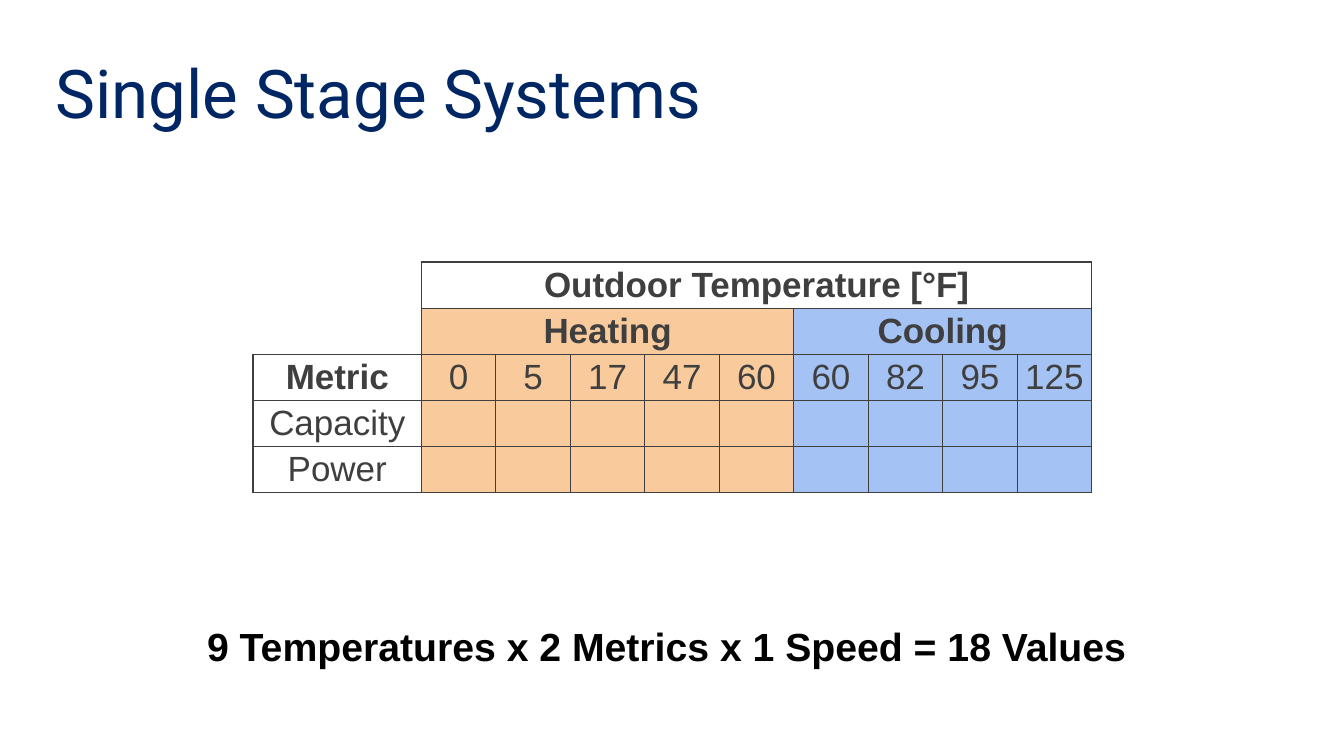
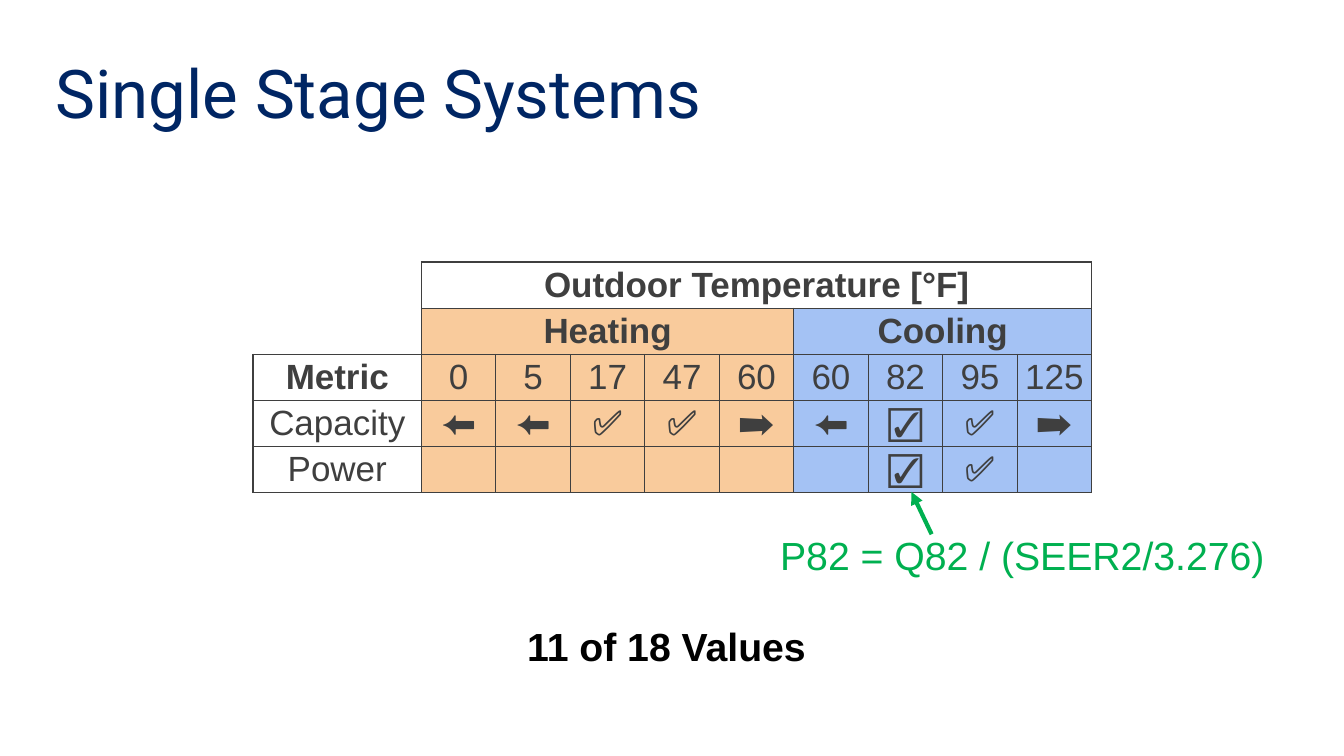
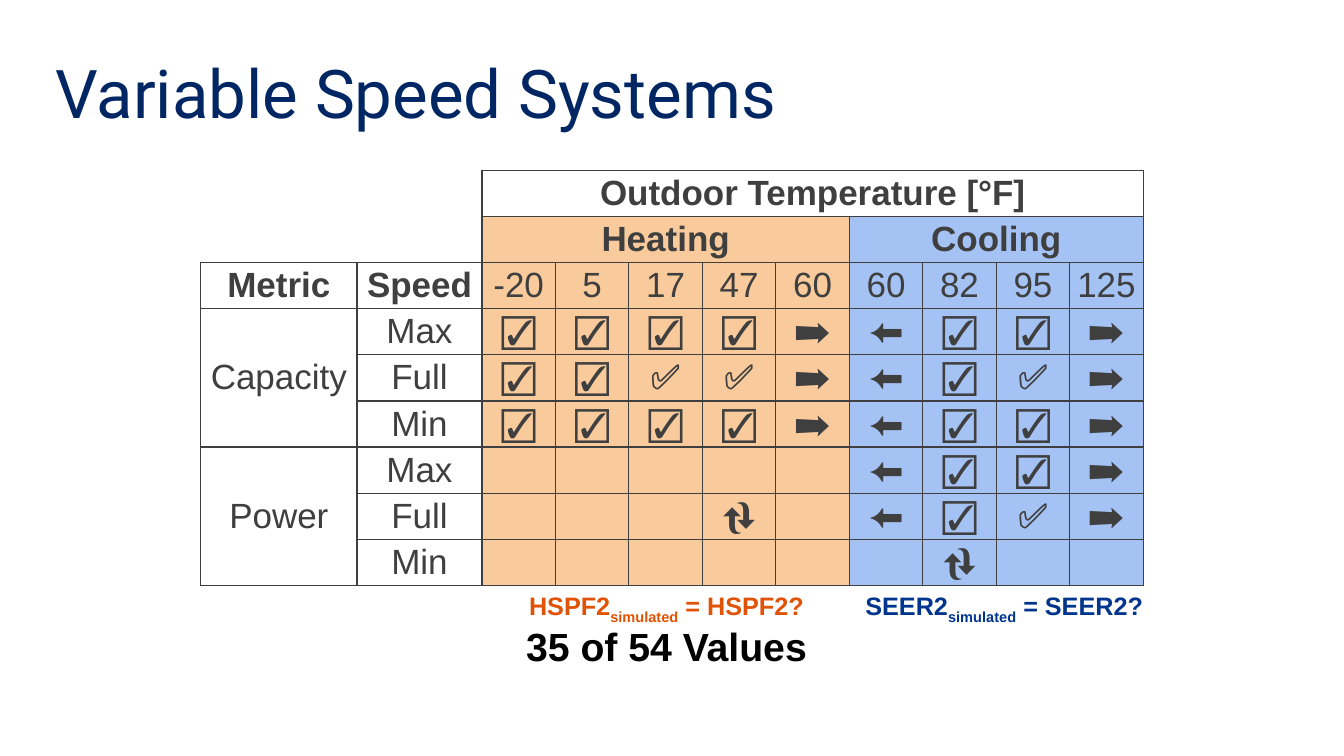
"""Build three slides of heat pump performance tables."""
import lxml.etree
import pptx
import pptx.dml.color
import pptx.enum.dml
import pptx.enum.shapes
import pptx.enum.text
import pptx.oxml.ns
import pptx.util

Inches = pptx.util.Inches
Pt = pptx.util.Pt
qn = pptx.oxml.ns.qn
CENTER = pptx.enum.text.PP_ALIGN.CENTER
MIDDLE = pptx.enum.text.MSO_ANCHOR.MIDDLE

NAVY = "002664"
GRAY = "3F3F3F"
GREEN = "00B050"
ORANGE = "F9CB9C"
BLUE = "A4C2F4"
NO_STYLE = "{2D5ABB26-0587-4C30-8999-92F81FD0307C}"
HEATING_COUNT = 5
TEMPERATURE_COUNT = 9
TOTAL_CENTER = 6.61


def color(value):
    return pptx.dml.color.RGBColor.from_string(value)


def add_text(slide, box, runs, size, text_color, bold=True, wrap=False):
    shape = slide.shapes.add_textbox(*[Inches(length) for length in box])
    shape.text_frame.word_wrap = wrap
    paragraph = shape.text_frame.paragraphs[0]
    paragraph.alignment = CENTER
    paragraph.font.name = "Arial"
    paragraph.font.size = Pt(size)
    paragraph.font.bold = bold
    paragraph.font.color.rgb = color(text_color)
    for text, baseline in runs:
        run = paragraph.add_run()
        run.text = text
        if baseline:
            run._r.get_or_add_rPr().set("baseline", str(baseline))


single_temperatures = "0 5 17 47 60 60 82 95 125"
variable_temperatures = "-20 5 17 47 60 60 82 95 125"
blank_row = "- - - - - - - - -"
tested_row = "☑️ ☑️ ☑️ ☑️ ➡️ ⬅️ ☑️ ☑️ ➡️"

pages = [
    {
        "title": "Single Stage Systems",
        "total": ("9 Temperatures x 2 Metrics x 1 Speed = 18 Values", 9.48),
        "box": (2.51, 2.6, 8.32, 2.29),
        "label_widths": [1.67],
        "rows": [
            (["Metric"], single_temperatures),
            (["Capacity"], blank_row),
            (["Power"], blank_row),
        ],
    },
    {
        "title": "Single Stage Systems",
        "total": ("11 of 18 Values", 3.04),
        "box": (2.51, 2.6, 8.32, 2.29),
        "label_widths": [1.67],
        "rows": [
            (["Metric"], single_temperatures),
            (["Capacity"], "⬅️ ⬅️ ✅ ✅ ➡️ ⬅️ ☑️ ✅ ➡️"),
            (["Power"], "- - - - - - ☑️ ✅ -"),
        ],
    },
    {
        "title": "Variable Speed Systems",
        "total": ("35 of 54 Values", 3.04),
        "box": (1.99, 1.69, 9.35, 4.12),
        "label_widths": [1.55, 1.24],
        "rows": [
            (["Metric", "Speed"], variable_temperatures),
            (["Capacity", "Max"], tested_row),
            (["", "Full"], "☑️ ☑️ ✅ ✅ ➡️ ⬅️ ☑️ ✅ ➡️"),
            (["", "Min"], tested_row),
            (["Power", "Max"], "- - - - - ⬅️ ☑️ ☑️ ➡️"),
            (["", "Full"], "- - - 🔃 - ⬅️ ☑️ ✅ ➡️"),
            (["", "Min"], "- - - - - - 🔃 - -"),
        ],
    },
]

presentation = pptx.Presentation()
presentation.slide_width = Inches(13.33)
presentation.slide_height = Inches(7.5)
slides = []

for page in pages:
    slide = presentation.slides.add_slide(presentation.slide_layouts[5])
    slides.append(slide)

    title = slide.shapes.title
    title.left, title.top = Inches(0.45), Inches(0.45)
    title.width, title.height = Inches(12.42), Inches(0.91)
    title.text_frame.text = page["title"]
    title.text_frame.auto_size = pptx.enum.text.MSO_AUTO_SIZE.NONE
    title.text_frame.vertical_anchor = MIDDLE
    paragraph = title.text_frame.paragraphs[0]
    paragraph.alignment = pptx.enum.text.PP_ALIGN.LEFT
    paragraph.font.name = "Roboto"
    paragraph.font.size = Pt(48)
    paragraph.font.color.rgb = color(NAVY)

    total, total_width = page["total"]
    total_box = (TOTAL_CENTER - total_width / 2, 6.12, total_width, 0.57)
    add_text(slide, total_box, [(total, 0)], 28, "000000")

    label_widths = page["label_widths"]
    label_count = len(label_widths)
    cooling_start = label_count + HEATING_COUNT
    blank_labels = [""] * label_count
    grid = [
        blank_labels + ["Outdoor Temperature [°F]"] + [""] * 8,
        blank_labels + ["Heating"] + [""] * 4 + ["Cooling"] + [""] * 3,
    ]
    for labels, marks in page["rows"]:
        grid.append(labels + ["" if mark == "-" else mark for mark in marks.split()])

    left, top, width, height = page["box"]
    frame = slide.shapes.add_table(
        len(grid), len(grid[0]), Inches(left), Inches(top), Inches(width), Inches(height)
    )
    table = frame.table
    table.first_row = False
    table.horz_banding = False
    table._tbl.tblPr.find(qn("a:tableStyleId")).text = NO_STYLE
    temperature_width = (width - sum(label_widths)) / TEMPERATURE_COUNT
    column_widths = label_widths + [temperature_width] * TEMPERATURE_COUNT
    for column, column_width in zip(table.columns, column_widths):
        column.width = Inches(column_width)

    last_column = len(column_widths) - 1
    table.cell(0, label_count).merge(table.cell(0, last_column))
    table.cell(1, label_count).merge(table.cell(1, cooling_start - 1))
    table.cell(1, cooling_start).merge(table.cell(1, last_column))
    if label_count == 2:
        for first_row in (3, 6):
            table.cell(first_row, 0).merge(table.cell(first_row + 2, 0))

    for row_index, texts in enumerate(grid):
        for column_index, text in enumerate(texts):
            cell = table.cell(row_index, column_index)
            cell.margin_left = cell.margin_right = Inches(0.03)
            cell.margin_top = cell.margin_bottom = Inches(0.02)
            cell.vertical_anchor = MIDDLE
            is_label = column_index < label_count
            paragraph = cell.text_frame.paragraphs[0]
            paragraph.text = text
            paragraph.alignment = CENTER
            paragraph.font.name = "Arial"
            paragraph.font.size = Pt(25)
            paragraph.font.bold = row_index < 2 or (row_index == 2 and is_label)
            paragraph.font.color.rgb = color(GRAY)

            sides = ["L", "R", "T", "B"]
            if is_label and row_index < 2:
                sides = ["R"] if column_index == label_count - 1 else []
                sides += ["B"] if row_index == 1 else []
            properties = cell._tc.get_or_add_tcPr()
            for side in sides:
                border = lxml.etree.SubElement(properties, qn("a:ln" + side), w=str(Pt(1)))
                solid = lxml.etree.SubElement(border, qn("a:solidFill"))
                lxml.etree.SubElement(solid, qn("a:srgbClr"), val=GRAY)

            if is_label or row_index == 0:
                cell.fill.background()
            else:
                cell.fill.solid()
                cell.fill.fore_color.rgb = color(BLUE if column_index >= cooling_start else ORANGE)

single_slide, variable_slide = slides[1:]
formula = [("P82 = Q82 / (SEER2/3.276)", 0)]
add_text(single_slide, (7.61, 5.22, 5.06, 0.57), formula, 28, GREEN, bold=False)
arrow = single_slide.shapes.add_connector(
    pptx.enum.shapes.MSO_CONNECTOR.STRAIGHT,
    Inches(9.24), Inches(5.3), Inches(9.04), Inches(4.88),
)
arrow.line.color.rgb = color(GREEN)
arrow.line.width = Pt(3)
lxml.etree.SubElement(arrow.line._get_or_add_ln(), qn("a:tailEnd"), type="triangle")
lxml.etree.SubElement(arrow._element.spPr, qn("a:effectLst"))

for rating, rating_left, rating_color in [("HSPF2", 4.14, "E05206"), ("SEER2", 7.49, "00358D")]:
    runs = [(rating, 0), ("simulated", -25000), (f" = {rating}?", 0)]
    add_text(variable_slide, (rating_left, 5.81, 4.94, 0.4), runs, 18, rating_color, wrap=True)

presentation.save("out.pptx")
